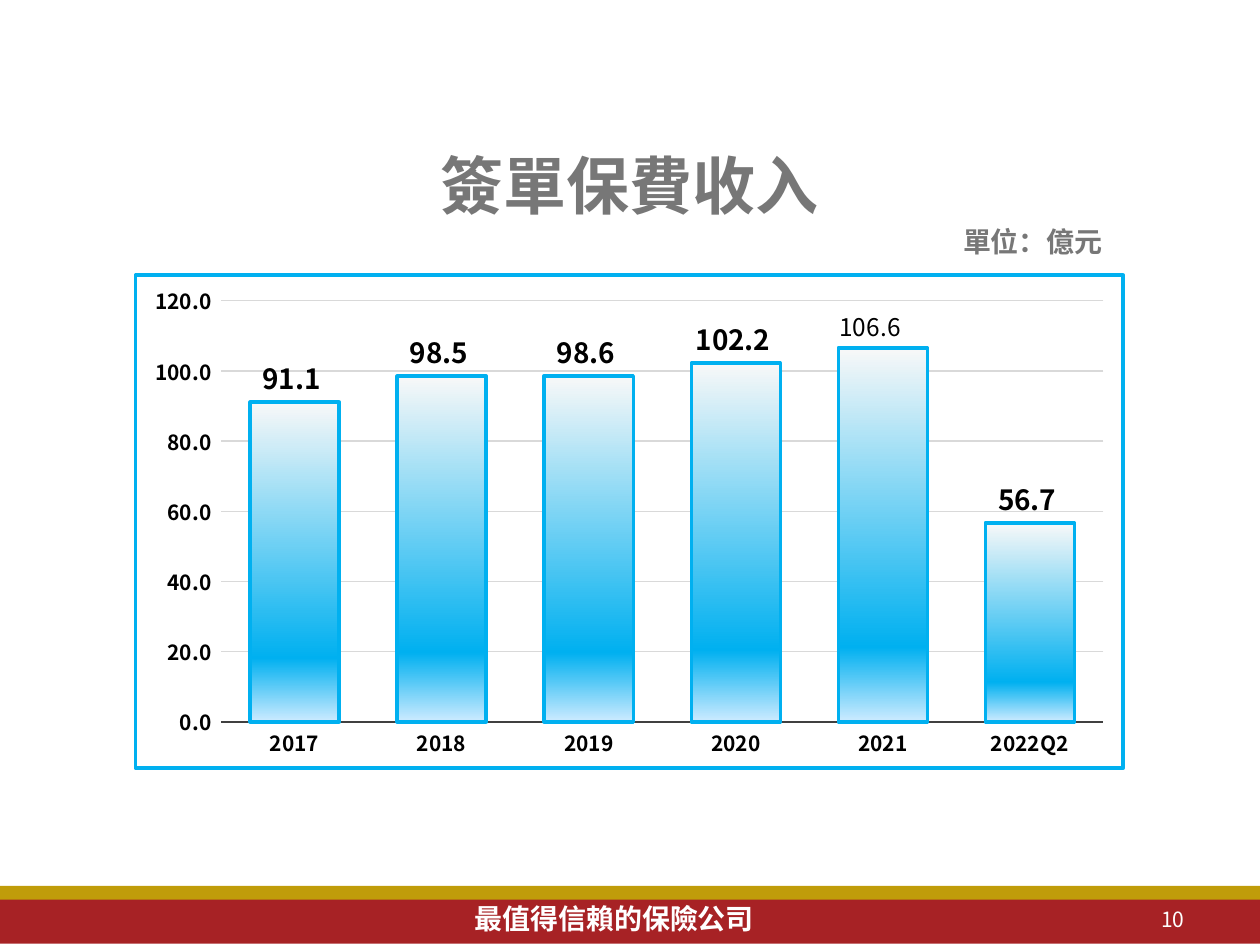
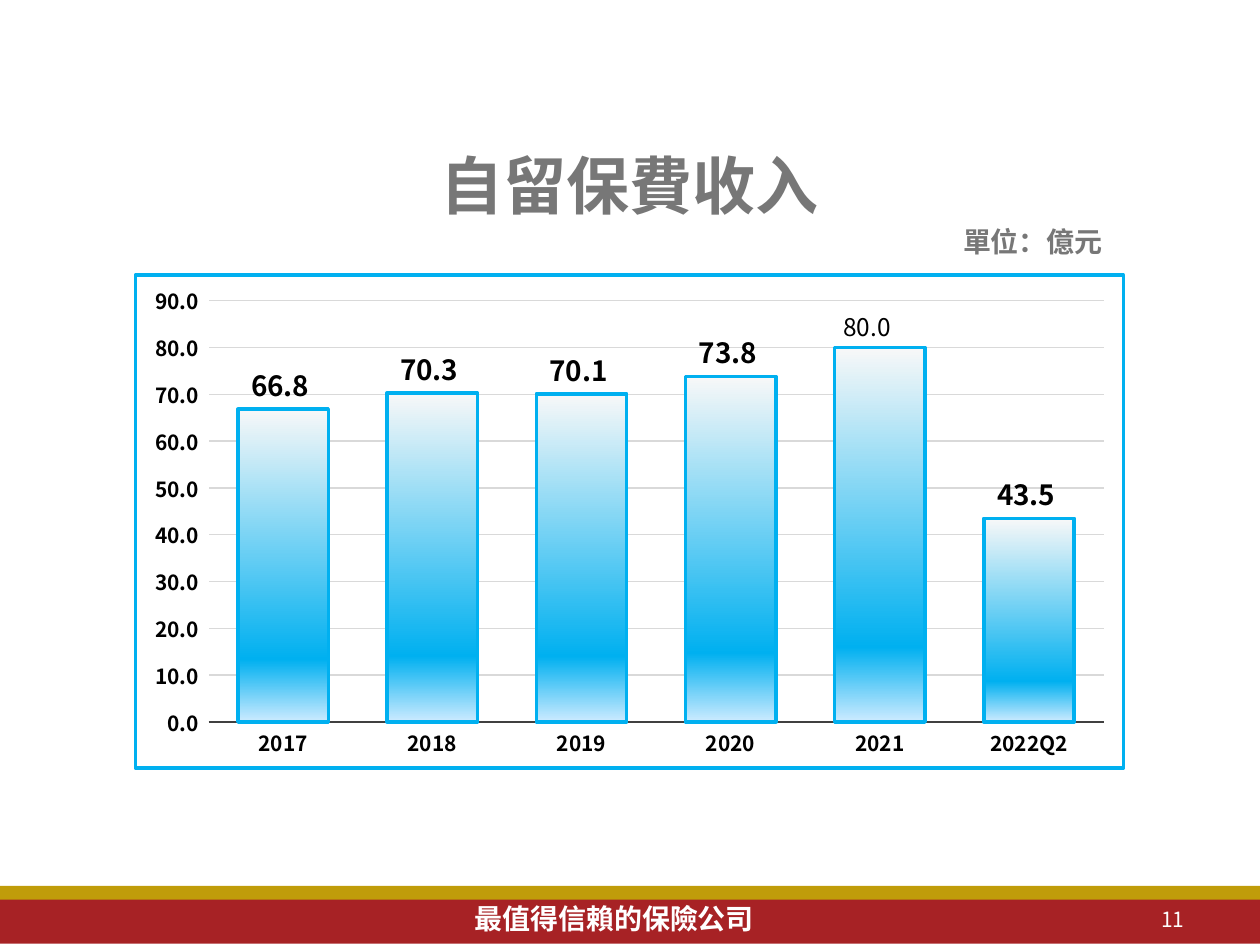
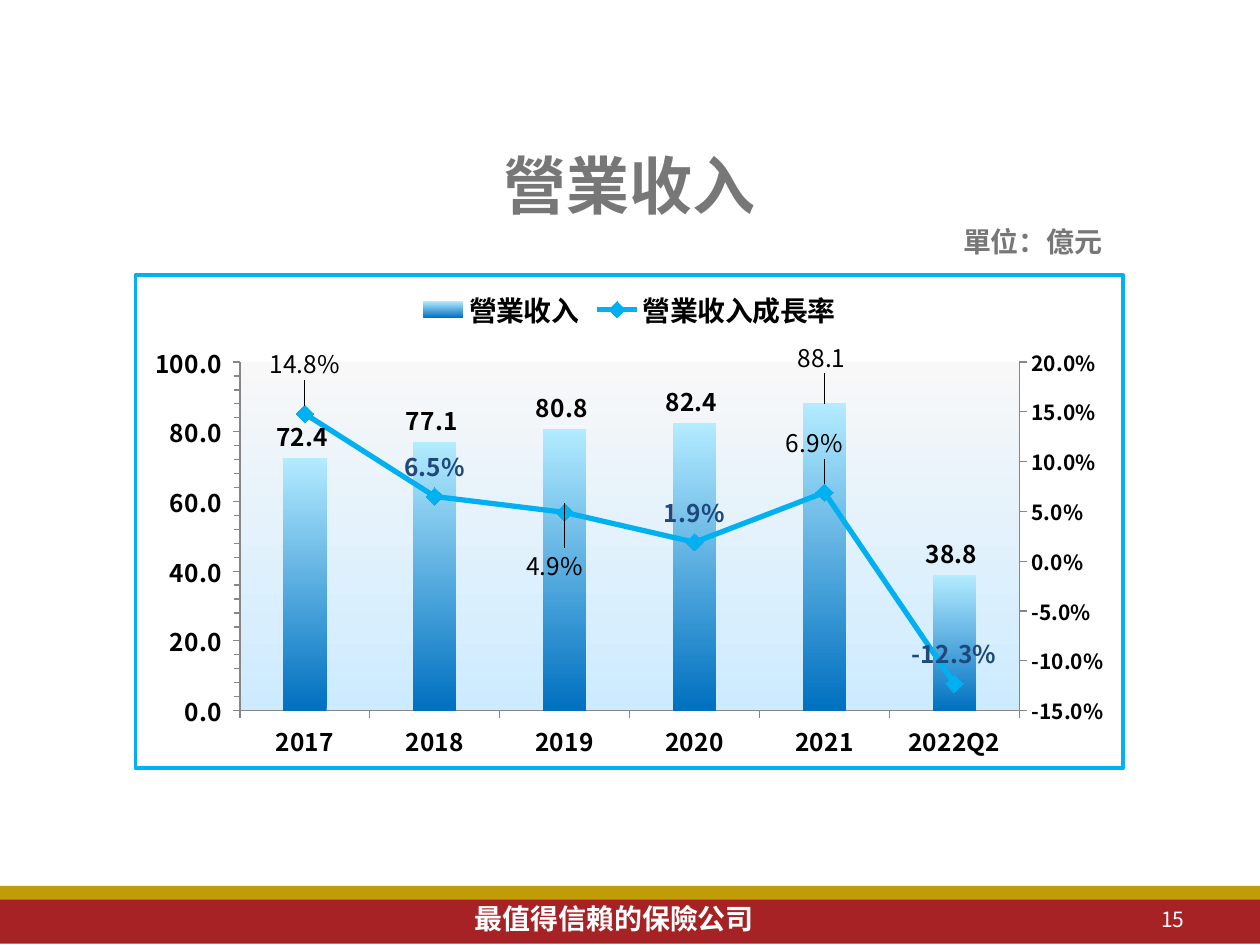
from copy import deepcopy

from pptx import Presentation
from pptx.chart.axis import ValueAxis
from pptx.chart.data import CategoryChartData
from pptx.dml.color import RGBColor
from pptx.enum.chart import (XL_CHART_TYPE, XL_LABEL_POSITION, XL_LEGEND_POSITION,
                             XL_MARKER_STYLE, XL_TICK_MARK)
from pptx.enum.shapes import MSO_SHAPE
from pptx.enum.text import MSO_ANCHOR, MSO_AUTO_SIZE, PP_ALIGN
from pptx.oxml import parse_xml
from pptx.oxml.ns import nsdecls, qn
from pptx.util import Inches, Pt

RECTANGLE = MSO_SHAPE.RECTANGLE
COLUMN = XL_CHART_TYPE.COLUMN_CLUSTERED
OUTSIDE_END, ABOVE = XL_LABEL_POSITION.OUTSIDE_END, XL_LABEL_POSITION.ABOVE
LEGEND_TOP = XL_LEGEND_POSITION.TOP
DIAMOND = XL_MARKER_STYLE.DIAMOND
TICK_NONE, TICK_OUT = XL_TICK_MARK.NONE, XL_TICK_MARK.OUTSIDE
TOP, MIDDLE = MSO_ANCHOR.TOP, MSO_ANCHOR.MIDDLE
FIT_SHAPE, NO_FIT = MSO_AUTO_SIZE.SHAPE_TO_FIT_TEXT, MSO_AUTO_SIZE.NONE
CENTER, RIGHT, JUSTIFY = PP_ALIGN.CENTER, PP_ALIGN.RIGHT, PP_ALIGN.JUSTIFY

FONT = "Noto Sans CJK SC"
GOLD, RED, WHITE, BLACK, GRAY = "C09C0A", "A72225", "FFFFFF", "000000", "777777"
CYAN, NAVY, AXIS_DARK, AXIS_GRAY, GRID = "00B0F0", "1F497D", "404040", "868686", "D9D9D9"
COLUMN_GRADIENT = [(0, "CDEBFF"), (20, CYAN), (100, "F8F8F8")]
REVENUE_GRADIENT = [(0, "0070C0"), (100, "B3EBFF")]
PLOT_GRADIENT = [(0, "F8F8F8"), (100, "CDEBFF")]

YEARS = ["2017", "2018", "2019", "2020", "2021", "2022Q2"]
PLAIN_FORMAT = r"0.0_);[Red]\(0.0\)"
COMMA_FORMAT = r"#,##0.0_);[Red]\(#,##0.0\)"
PERCENT_FORMAT = "0.0%"

LINE_PLOT_XML = f"""<c:lineChart {nsdecls('c')}><c:grouping val="standard"/>
<c:varyColors val="0"/><c:marker val="1"/><c:axId val="5001"/><c:axId val="5002"/></c:lineChart>"""
HIDDEN_AXIS_XML = f"""<c:catAx {nsdecls('c')}><c:axId val="5001"/>
<c:scaling><c:orientation val="minMax"/></c:scaling><c:delete val="1"/><c:axPos val="b"/>
<c:majorTickMark val="none"/><c:minorTickMark val="none"/><c:tickLblPos val="nextTo"/>
<c:crossAx val="5002"/><c:crosses val="autoZero"/></c:catAx>"""
RIGHT_AXIS_XML = f"""<c:valAx {nsdecls('c')}><c:axId val="5002"/>
<c:scaling><c:orientation val="minMax"/></c:scaling><c:delete val="0"/><c:axPos val="r"/>
<c:majorTickMark val="out"/><c:minorTickMark val="none"/><c:tickLblPos val="nextTo"/>
<c:crossAx val="5001"/><c:crosses val="max"/></c:valAx>"""


def color(value):
    return RGBColor.from_string(value)


def gradient(stops, angle):
    stop_xml = "".join(f'<a:gs pos="{position * 1000}"><a:srgbClr val="{value}"/></a:gs>'
                       for position, value in stops)
    return parse_xml(f'<a:gradFill {nsdecls("a")} rotWithShape="1"><a:gsLst>{stop_xml}</a:gsLst>'
                     f'<a:lin ang="{angle * 60000}" scaled="0"/></a:gradFill>')


def set_east_asian_font(element):
    for latin in list(element.iter(qn("a:latin"))):
        latin.addnext(parse_xml(f'<a:ea {nsdecls("a")} typeface="{FONT}"/>'))


class Deck:
    def __init__(self):
        self.presentation = Presentation()
        self.presentation.slide_width = Inches(10)
        self.presentation.slide_height = Inches(7.5)
        self.slide = None

    # Text and shapes
    def style_font(self, font, size, value=BLACK, bold=True):
        font.name, font.size, font.bold = FONT, Pt(size), bold
        font.color.rgb = color(value)

    def text(self, box, words, size, value, align, bold=True, anchor=TOP, wrap=True, fit=NO_FIT):
        shape = self.slide.shapes.add_textbox(*map(Inches, box))
        frame = shape.text_frame
        frame.word_wrap, frame.auto_size, frame.vertical_anchor = wrap, fit, anchor
        paragraph = frame.paragraphs[0]
        paragraph.alignment = align
        run = paragraph.add_run()
        run.text = words
        self.style_font(run.font, size, value, bold)
        set_east_asian_font(shape.element)

    def band(self, top, height, value):
        shape = self.slide.shapes.add_shape(
            RECTANGLE, 0, Inches(top), self.presentation.slide_width, Inches(height))
        shape.shadow.inherit = False
        shape.fill.solid()
        shape.fill.fore_color.rgb = color(value)
        shape.line.fill.background()

    # Slide with its title, unit note and footer
    def add_slide(self, title, number):
        self.slide = self.presentation.slides.add_slide(self.presentation.slide_layouts[6])
        self.band(7.03, 0.12, GOLD)
        self.band(7.14, 0.35, RED)
        self.text((3.67, 7.11, 2.65, 0.37), "最值得信賴的保險公司", 16, WHITE, JUSTIFY, fit=FIT_SHAPE)
        self.text((0.5, 0.99, 9, 0.94), title, 36, GRAY, CENTER, anchor=MIDDLE)
        self.text((7.17, 7.14, 2.33, 0.31), str(number), 12, WHITE, RIGHT, bold=False, anchor=MIDDLE)
        self.text((7.53, 1.73, 1.32, 0.37), "單位：億元", 16, GRAY, RIGHT, wrap=False, fit=FIT_SHAPE)

    # Chart parts
    def chart(self, series, gap, border_width):
        chart_data = CategoryChartData()
        chart_data.categories = YEARS
        for name, values, number_format in series:
            chart_data.add_series(name, values, number_format)
        frame = self.slide.shapes.add_chart(
            COLUMN, Inches(1.06), Inches(2.17), Inches(7.87), Inches(3.94), chart_data)
        chart = frame.chart
        chart.has_title = chart.has_legend = False
        self.style_font(chart.font, 14, bold=False)
        chart.plots[0].gap_width = gap
        chart.plots[0].vary_by_categories = False
        chart.element.find(qn("c:chart")).addnext(parse_xml(
            f'<c:spPr {nsdecls("c", "a")}><a:solidFill><a:srgbClr val="{WHITE}"/></a:solidFill>'
            f'<a:ln w="{Pt(border_width)}"><a:solidFill><a:srgbClr val="{CYAN}"/></a:solidFill>'
            f'</a:ln></c:spPr>'))
        return chart

    def line(self, line_format, value, width):
        line_format.color.rgb = color(value)
        line_format.width = Pt(width)

    def axis(self, axis, size, tick, line=None, scale=None, number_format=None):
        axis.major_tick_mark, axis.minor_tick_mark = tick, TICK_NONE
        axis.has_major_gridlines = False
        self.style_font(axis.tick_labels.font, size)
        if line:
            self.line(axis.format.line, *line)
        else:
            axis.format.line.fill.background()
        if scale:
            axis.minimum_scale, axis.maximum_scale, axis.major_unit = scale
            axis.tick_labels.number_format = number_format
            axis.tick_labels.number_format_is_linked = False

    def column_fill(self, series, stops):
        series.invert_if_negative = False
        series.format.fill.background()
        properties = series._element.find(qn("c:spPr"))
        properties.replace(properties.find(qn("a:noFill")), gradient(stops, 270))

    def labels(self, series, size, value, number_format, position, moved):
        labels = series.data_labels
        labels.show_value = True
        labels.position = position
        labels.number_format = number_format
        labels.number_format_is_linked = False
        self.style_font(labels.font, size, value)
        group = series._element.find(qn("c:dLbls"))
        shared = [group.find(qn("c:numFmt")), group.find(qn("c:txPr"))]
        for index, (x, y) in moved.items():
            series.points[index].data_label.position = position
            label = next(item for item in group.findall(qn("c:dLbl"))
                         if item.find(qn("c:idx")).get("val") == str(index))
            layout = parse_xml(f'<c:layout {nsdecls("c")}><c:manualLayout><c:x val="{x}"/>'
                               f'<c:y val="{y}"/></c:manualLayout></c:layout>')
            for place, part in enumerate([layout, *map(deepcopy, shared)], start=1):
                label.insert(place, part)

    def premium_chart(self, values, scale, number_format, border_width):
        chart = self.chart([("Series 1", values, number_format)], 65, border_width)
        self.axis(chart.category_axis, 12, TICK_NONE, (AXIS_DARK, 1.5))
        self.axis(chart.value_axis, 12, TICK_NONE, None, scale, number_format)
        chart.value_axis.has_major_gridlines = True
        self.line(chart.value_axis.major_gridlines.format.line, GRID, 0.75)
        series = chart.plots[0].series[0]
        self.column_fill(series, COLUMN_GRADIENT)
        self.line(series.format.line, CYAN, 2)
        self.labels(series, 16, BLACK, number_format, OUTSIDE_END, {4: (-0.01, 0)})
        set_east_asian_font(chart.element)

    def revenue_chart(self, revenue, growth):
        chart = self.chart([("營業收入", revenue, PLAIN_FORMAT),
                            ("營業收入成長率", growth, PERCENT_FORMAT)], 200, 2.25)
        thin_line = (AXIS_GRAY, 0.75)
        self.axis(chart.category_axis, 14, TICK_OUT, thin_line)
        self.axis(chart.value_axis, 14, TICK_OUT, thin_line, (0, 100, 20), PLAIN_FORMAT)
        chart.value_axis.minor_tick_mark = TICK_OUT

        # Growth line on its own right-hand axis
        columns = chart.element.find(".//" + qn("c:barChart"))
        plot_area = columns.getparent()
        line_plot = parse_xml(LINE_PLOT_XML)
        columns.addnext(line_plot)
        growth_element = columns.findall(qn("c:ser"))[1]
        for column_setting in growth_element.findall(qn("c:invertIfNegative")):
            growth_element.remove(column_setting)
        line_plot.insert(2, growth_element)
        right_axis = parse_xml(RIGHT_AXIS_XML)
        plot_area.find(qn("c:valAx")).addnext(right_axis)
        right_axis.addnext(parse_xml(HIDDEN_AXIS_XML))
        self.axis(ValueAxis(right_axis), 12, TICK_OUT, thin_line, (-0.15, 0.2, 0.05), PERCENT_FORMAT)

        # Plot background
        background = parse_xml(f'<c:spPr {nsdecls("c", "a")}/>')
        background.append(gradient(PLOT_GRADIENT, 90))
        plot_area.append(background)

        # Series and legend
        revenue_series = chart.plots[0].series[0]
        self.column_fill(revenue_series, REVENUE_GRADIENT)
        self.labels(revenue_series, 14, BLACK, PLAIN_FORMAT, OUTSIDE_END, {4: (0, -0.05)})
        growth_series = chart.plots[1].series[0]
        growth_series.smooth = False
        self.line(growth_series.format.line, CYAN, 3)
        marker = growth_series.marker
        marker.style, marker.size = DIAMOND, 10
        marker.format.fill.solid()
        marker.format.fill.fore_color.rgb = color(CYAN)
        marker.format.line.color.rgb = color(CYAN)
        self.labels(growth_series, 14, NAVY, PERCENT_FORMAT, ABOVE,
                    {0: (0, -0.04), 2: (-0.01, 0.17), 4: (-0.01, -0.04)})
        chart.has_legend = True
        chart.legend.position = LEGEND_TOP
        chart.legend.include_in_layout = False
        self.style_font(chart.legend.font, 16)
        set_east_asian_font(chart.element)


def main():
    deck = Deck()

    # Written premiums
    deck.add_slide("簽單保費收入", 10)
    deck.premium_chart([91.1, 98.5, 98.6, 102.2, 106.6, 56.7], (0, 120, 20), PLAIN_FORMAT, 2.25)

    # Retained premiums
    deck.add_slide("自留保費收入", 11)
    deck.premium_chart([66.8, 70.3, 70.1, 73.8, 80, 43.5], (0, 90, 10), COMMA_FORMAT, 2)

    # Operating revenue and its growth
    deck.add_slide("營業收入", 15)
    deck.revenue_chart([72.4, 77.1, 80.8, 82.4, 88.1, 38.8],
                       [0.148, 0.065, 0.049, 0.019, 0.069, -0.123])

    deck.presentation.save("out.pptx")


if __name__ == "__main__":
    main()
